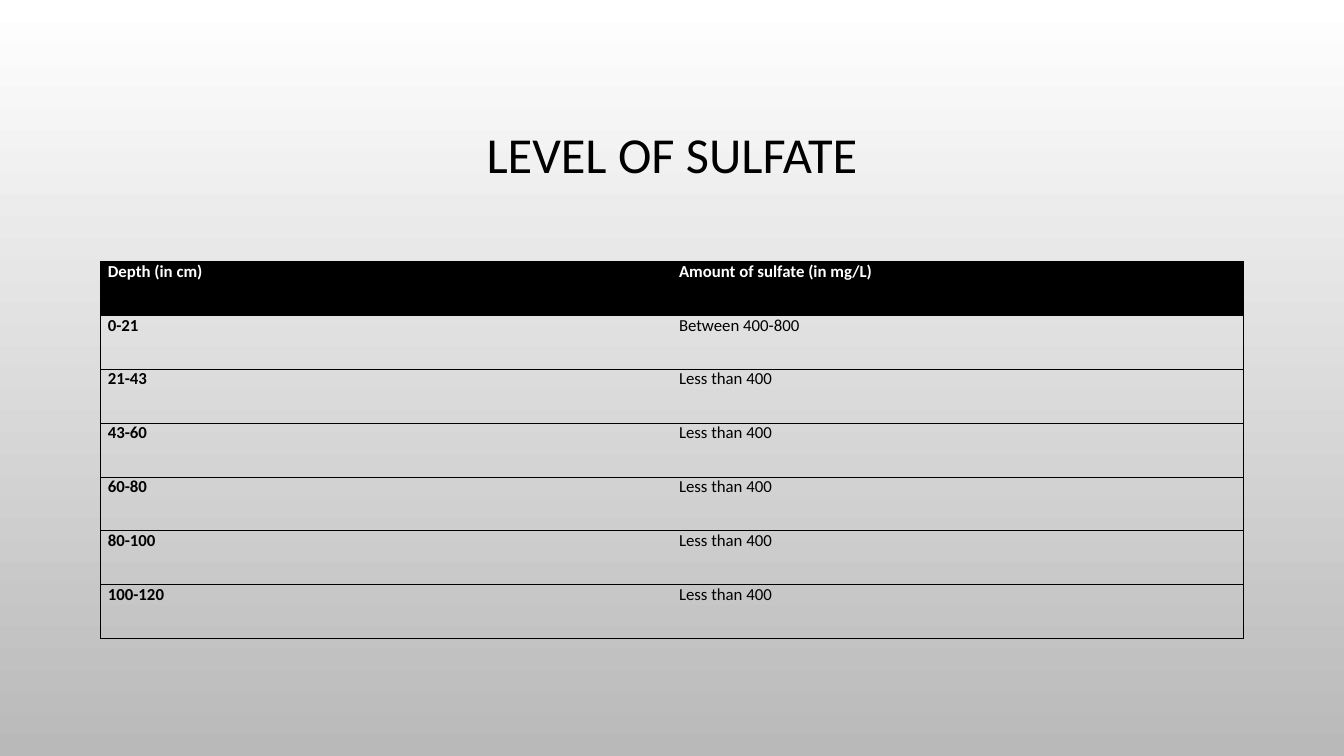
from lxml import etree
from pptx import Presentation
from pptx.dml.color import RGBColor
from pptx.enum import text
from pptx.oxml.ns import qn
from pptx.util import Inches, Pt

TITLE = "LEVEL OF SULFATE"
ROWS = [
    ("Depth (in cm)", "Amount of sulfate (in mg/L)"),
    ("0-21", "Between 400-800"),
    ("21-43", "Less than 400"),
    ("43-60", "Less than 400"),
    ("60-80", "Less than 400"),
    ("80-100", "Less than 400"),
    ("100-120", "Less than 400"),
]
COLORS = {"ink": "000000", "paper": "FFFFFF", "shade": "B9B9B9"}
FONT = "Calibri"
LEFT, WIDTH = Inches(1), Inches(11.33)
TABLE_TOP, TABLE_HEIGHT = Inches(2.59), Inches(3.75)


def rgb(name):
    return RGBColor.from_string(COLORS[name])


def set_font(p, size, color, bold=False):
    p.font.name = FONT
    p.font.size = Pt(size)
    p.font.bold = bold
    p.font.color.rgb = rgb(color)


def set_borders(cell, drawn):
    """Rule the sides listed in drawn and clear the others."""
    tcPr = cell._tc.get_or_add_tcPr()
    for side in "LRTB":
        ln = etree.SubElement(tcPr, qn(f"a:ln{side}"), w=str(Pt(0.75)))
        if side in drawn:
            fill = etree.SubElement(ln, qn("a:solidFill"))
            etree.SubElement(fill, qn("a:srgbClr"), val=COLORS["ink"])
        else:
            etree.SubElement(ln, qn("a:noFill"))


def add_title(s):
    title = s.shapes.title
    title.left, title.top = LEFT, Inches(0.68)
    title.width, title.height = WIDTH, Inches(1.75)
    tf = title.text_frame
    tf.text = TITLE
    tf.word_wrap = True
    tf.vertical_anchor = text.MSO_ANCHOR.MIDDLE
    p = tf.paragraphs[0]
    p.alignment = text.PP_ALIGN.CENTER
    p.line_spacing = 0.9
    set_font(p, 36, "ink")


def add_sulfate_table(s):
    table = s.shapes.add_table(len(ROWS), len(ROWS[0]), LEFT, TABLE_TOP,
                               WIDTH, TABLE_HEIGHT).table
    table.horz_banding = False
    for i, row in enumerate(ROWS):
        for j, value in enumerate(row):
            header = i == 0
            cell = table.cell(i, j)
            cell.text = value
            cell.margin_left = cell.margin_right = Inches(0.07)
            cell.margin_top = cell.margin_bottom = 0
            set_borders(cell, "LTB" if j == 0 else "RTB")
            if header:
                cell.fill.solid()
                cell.fill.fore_color.rgb = rgb("ink")
            else:
                cell.fill.background()
            set_font(cell.text_frame.paragraphs[0], 12,
                     "paper" if header else "ink", bold=header or j == 0)


def main():
    prs = Presentation()
    prs.slide_width, prs.slide_height = Inches(13.33), Inches(7.5)
    s = prs.slides.add_slide(prs.slide_layouts[5])
    fill = s.background.fill
    fill.gradient()
    fill.gradient_angle = 270
    for stop, color in zip(fill.gradient_stops, ("paper", "shade")):
        stop.color.rgb = rgb(color)
    add_title(s)
    add_sulfate_table(s)
    prs.save("out.pptx")


if __name__ == "__main__":
    main()
